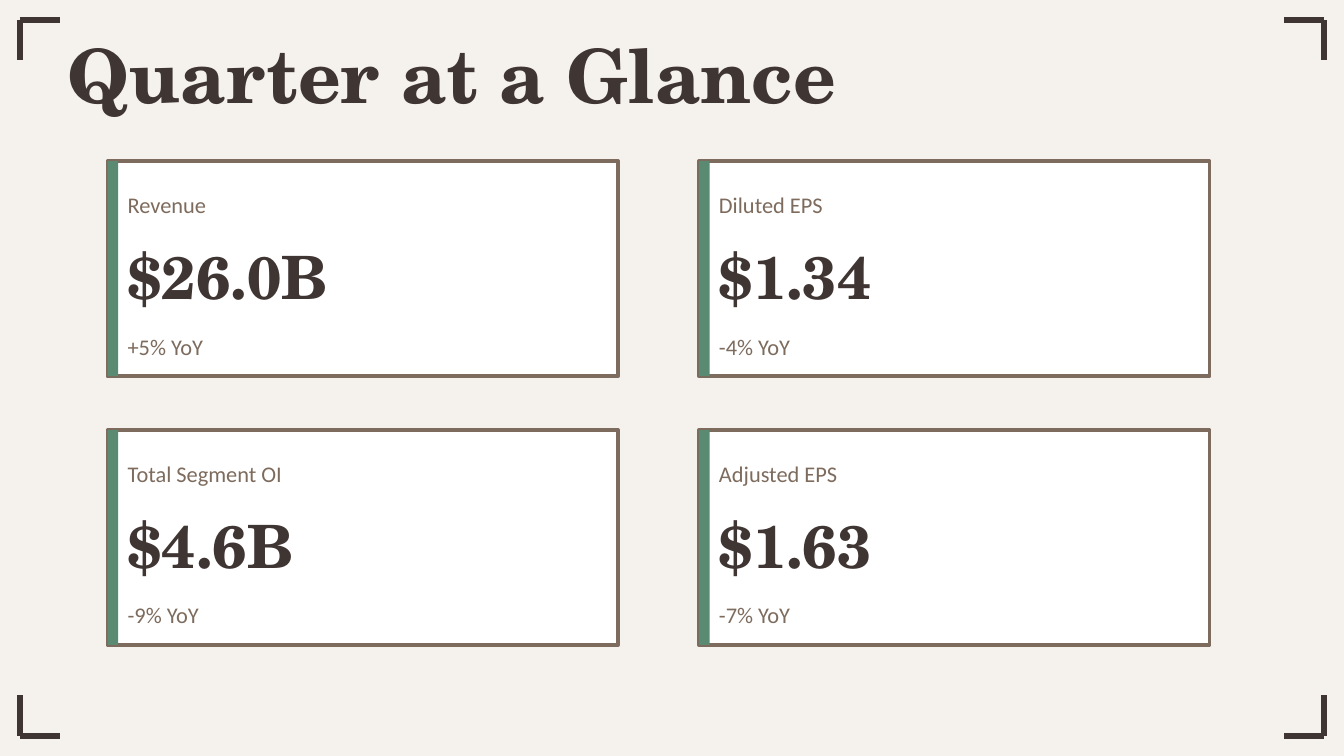
from itertools import product

from lxml.etree import SubElement
from pptx import Presentation
from pptx.dml.color import RGBColor
from pptx.enum.shapes import MSO_CONNECTOR, MSO_SHAPE
from pptx.enum.text import MSO_ANCHOR, MSO_AUTO_SIZE, PP_ALIGN
from pptx.oxml.ns import qn
from pptx.util import Pt

BACKGROUND = RGBColor(0xF5, 0xF2, 0xEE)
INK = RGBColor(0x3F, 0x35, 0x33)
BROWN = RGBColor(0x7D, 0x6B, 0x5D)
GREEN = RGBColor(0x5B, 0x8A, 0x72)
WHITE = RGBColor(0xFF, 0xFF, 0xFF)

SLIDE_WIDTH, SLIDE_HEIGHT = 720, 405
MARGIN, CORNER_ARM = 10.8, 21.6
CARD_LEFT, CARD_TOP = 57.6, 86.4
CARD_WIDTH, CARD_HEIGHT = 273.6, 115.2
COLUMN_PITCH, ROW_PITCH = 316.8, 144

METRICS = [
    ("Revenue", "$26.0B", "+5% YoY"),
    ("Diluted EPS", "$1.34", "-4% YoY"),
    ("Total Segment OI", "$4.6B", "-9% YoY"),
    ("Adjusted EPS", "$1.63", "-7% YoY"),
]


class SlideBuilder:
    heading_font = "TeX Gyre Schola"
    body_font = "Calibri"

    def __init__(self, slide):
        self.slide = slide
        slide.background.fill.solid()
        slide.background.fill.fore_color.rgb = BACKGROUND

    def set_text(self, shape, text, size, heading=False):
        """Fill a shape with one styled, left-aligned line without insets."""
        frame = shape.text_frame
        frame.auto_size = MSO_AUTO_SIZE.NONE
        frame.word_wrap = True
        frame.vertical_anchor = MSO_ANCHOR.MIDDLE
        frame.margin_left = frame.margin_right = 0
        frame.margin_top = frame.margin_bottom = 0
        paragraph = frame.paragraphs[0]
        paragraph.alignment = PP_ALIGN.LEFT
        run = paragraph.add_run()
        run.text = text
        run.font.name = self.heading_font if heading else self.body_font
        run.font.size = Pt(size)
        run.font.bold = heading
        run.font.color.rgb = INK if heading else BROWN

    def title(self, text):
        title = self.slide.shapes.title
        title.left, title.top, title.width, title.height = map(Pt, (36, 21.6, 648, 36))
        self.set_text(title, text, 40, heading=True)

    def text(self, left, top, width, height, text, size, heading=False):
        box = self.slide.shapes.add_textbox(*map(Pt, (left, top, width, height)))
        self.set_text(box, text, size, heading)

    def rectangle(self, left, top, width, height, fill, outline=None):
        shape = self.slide.shapes.add_shape(
            MSO_SHAPE.RECTANGLE, *map(Pt, (left, top, width, height)))
        shape.shadow.inherit = False
        shape.fill.solid()
        shape.fill.fore_color.rgb = fill
        if outline is None:
            shape.line.fill.background()
        else:
            shape.line.color.rgb = outline
            shape.line.width = Pt(2)

    def line(self, x1, y1, x2, y2):
        connector = self.slide.shapes.add_connector(
            MSO_CONNECTOR.STRAIGHT, *map(Pt, (x1, y1, x2, y2)))
        connector.line.color.rgb = INK
        connector.line.width = Pt(3)
        SubElement(connector._element.spPr, qn("a:effectLst"))

    def corner(self, x, y, inward_x, inward_y):
        """Draw a bracket at x, y with arms along the inward signs."""
        self.line(x, y, x + inward_x * CORNER_ARM, y)
        self.line(x, y, x, y + inward_y * CORNER_ARM)

    def card(self, left, top, label, value, change):
        self.rectangle(left, top, CARD_WIDTH, CARD_HEIGHT, WHITE, BROWN)
        self.rectangle(left, top, 5.76, CARD_HEIGHT, GREEN)
        text_left, text_width = left + 10.8, 252
        self.text(text_left, top + 10.8, text_width, 25.2, label, 12)
        self.text(text_left, top + 39.6, text_width, 43.2, value, 32, heading=True)
        self.text(text_left, top + 86.4, text_width, 25.2, change, 12)


def main():
    presentation = Presentation()
    presentation.slide_width = Pt(SLIDE_WIDTH)
    presentation.slide_height = Pt(SLIDE_HEIGHT)
    title_only = presentation.slide_layouts[5]
    builder = SlideBuilder(presentation.slides.add_slide(title_only))

    vertical_edges = ((MARGIN, 1), (SLIDE_HEIGHT - MARGIN, -1))
    horizontal_edges = ((MARGIN, 1), (SLIDE_WIDTH - MARGIN, -1))
    for (y, inward_y), (x, inward_x) in product(vertical_edges, horizontal_edges):
        builder.corner(x, y, inward_x, inward_y)

    builder.title("Quarter at a Glance")
    for index, metric in enumerate(METRICS):
        row, column = divmod(index, 2)
        builder.card(CARD_LEFT + column * COLUMN_PITCH,
                     CARD_TOP + row * ROW_PITCH, *metric)

    presentation.save("out.pptx")


if __name__ == "__main__":
    main()
